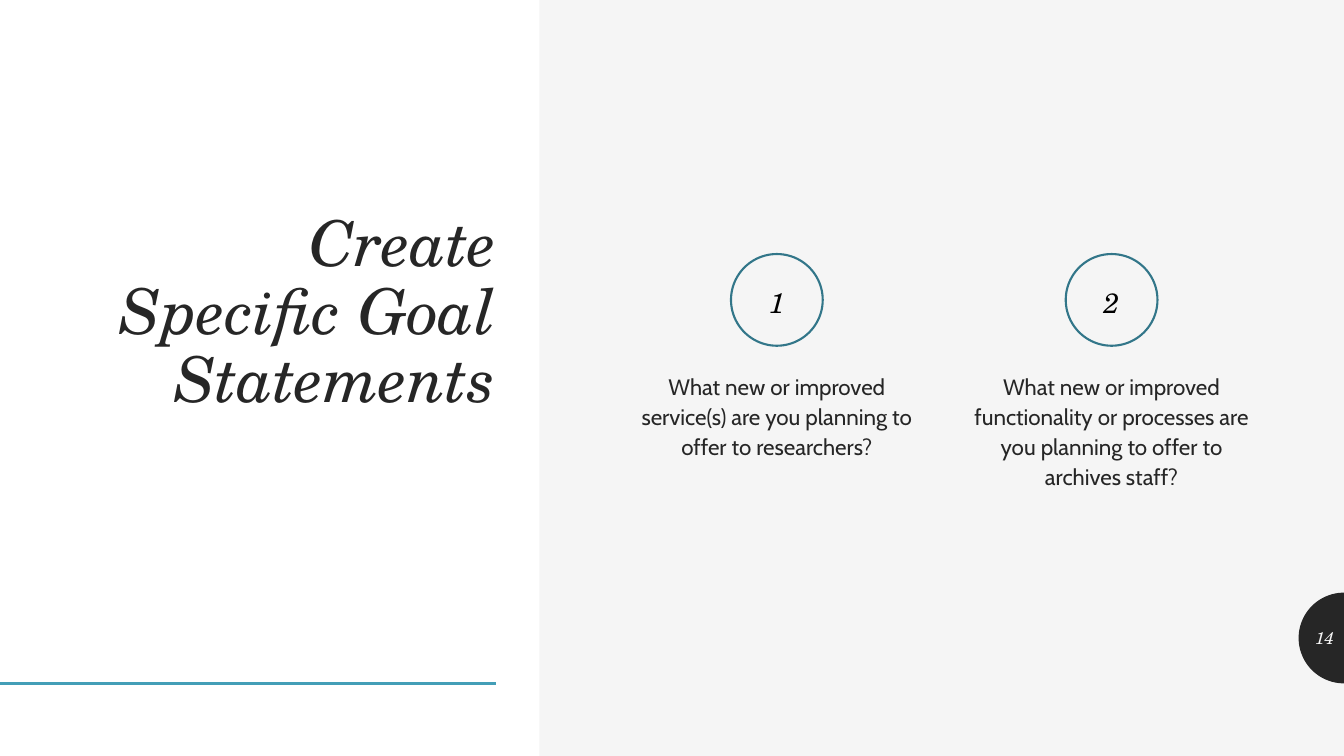
from math import cos, pi, sin

from lxml import etree
from pptx import Presentation
from pptx.dml.color import RGBColor
from pptx.enum.shapes import MSO_CONNECTOR, MSO_SHAPE
from pptx.enum.text import MSO_ANCHOR, MSO_AUTO_SIZE, PP_ALIGN
from pptx.oxml.ns import qn
from pptx.util import Inches, Pt

INK = RGBColor(0x26, 0x26, 0x26)
BLACK = RGBColor(0x00, 0x00, 0x00)
WHITE = RGBColor(0xFF, 0xFF, 0xFF)
PALE_GREY = RGBColor(0xF5, 0xF5, 0xF5)
TEAL = RGBColor(0x43, 0x9E, 0xB7)
DARK_TEAL = RGBColor(0x32, 0x76, 0x89)

STRAIGHT = MSO_CONNECTOR.STRAIGHT
RECTANGLE, OVAL = MSO_SHAPE.RECTANGLE, MSO_SHAPE.OVAL
TOP, MIDDLE, BOTTOM = MSO_ANCHOR.TOP, MSO_ANCHOR.MIDDLE, MSO_ANCHOR.BOTTOM
CENTER, RIGHT = PP_ALIGN.CENTER, PP_ALIGN.RIGHT
NO_AUTOFIT = MSO_AUTO_SIZE.NONE

SERIF, SANS = "TeX Gyre Schola", "Cabin"
TWO_CONTENT_LAYOUT = 3
SLIDE_WIDTH, SLIDE_HEIGHT = 13.33, 7.5

TITLE = "Create Specific Goal Statements"
QUESTIONS = [
    "What new or improved service(s) are you planning to offer to researchers?",
    "What new or improved functionality or processes are you planning to offer to archives staff?",
]

TITLE_FONT = {"name": SERIF, "size": Pt(45), "italic": True, "bold": False}
NUMBER_FONT = {"name": SERIF, "size": Pt(20), "italic": True}
PAGE_FONT = {"name": SERIF, "size": Pt(12), "italic": True}
QUESTION_FONT = {"name": SANS, "size": Pt(16)}

TITLE_PARAGRAPH = {"alignment": RIGHT, "line_spacing": 0.9, "space_before": Pt(0)}
GOAL_PARAGRAPH = {"alignment": CENTER, "line_spacing": 1.12, "space_before": Pt(9)}
PAGE_PARAGRAPH = {"alignment": RIGHT}


def set_attributes(target, values):
    """Set each named attribute of the target."""
    for name, value in values.items():
        setattr(target, name, value)


def place(shape, left, top, width, height):
    """Move and size a shape in inches."""
    box = {"left": left, "top": top, "width": width, "height": height}
    set_attributes(shape, {name: Inches(value) for name, value in box.items()})


def write(shape, text, font, color, paragraph_format, anchor, insets=None):
    """Write one formatted paragraph into a shape."""
    frame = shape.text_frame
    set_attributes(frame, {"text": text, "word_wrap": True,
                           "auto_size": NO_AUTOFIT, "vertical_anchor": anchor})
    for side, inset in zip(("left", "top", "right", "bottom"), insets or ()):
        setattr(frame, f"margin_{side}", Inches(inset))
    paragraph = frame.paragraphs[0]
    set_attributes(paragraph, paragraph_format)
    run_font = paragraph.runs[0].font
    set_attributes(run_font, font)
    run_font.color.rgb = color


def remove_bullet(paragraph):
    """Drop the bullet and indent inherited from the template."""
    properties = paragraph._p.get_or_add_pPr()
    properties.set("marL", "0")
    properties.set("indent", "0")
    etree.SubElement(properties, qn("a:buNone"))


def add_title_panel(slide, left, top, width, height):
    """Draw the white panel with its rule and the title on it."""
    shapes = slide.shapes
    panel = shapes.add_shape(RECTANGLE, *map(Inches, (left, top, width, height)))
    panel.shadow.inherit = False
    panel.fill.solid()
    panel.fill.fore_color.rgb = WHITE
    panel.line.fill.background()

    rule_top = Inches(top + 6.78)
    rule = shapes.add_connector(STRAIGHT, Inches(left), rule_top,
                                Inches(left + 4.92), rule_top)
    rule.line.color.rgb = TEAL
    rule.line.width = Pt(2)
    etree.SubElement(rule._element.spPr, qn("a:effectLst"))

    title = shapes.title
    panel._element.addprevious(title._element)
    rule._element.addnext(title._element)
    place(title, left + 0.83, top + 1.99, 4.19, 2.19)
    write(title, TITLE, TITLE_FONT, INK, TITLE_PARAGRAPH, BOTTOM,
          (0.1, 0.05, 0.1, 0.05))


def add_goal(slide, placeholder, number, question, left, top, width, height):
    """Place a question with its numbered circle above it."""
    place(placeholder, left, top, width, height)
    write(placeholder, question, QUESTION_FONT, INK, GOAL_PARAGRAPH, TOP,
          (0, 1.46, 0, 0))
    remove_bullet(placeholder.text_frame.paragraphs[0])

    diameter = 0.91
    circle = slide.shapes.add_shape(
        OVAL, Inches(left + (width - diameter) / 2), Inches(top + 0.31),
        Inches(diameter), Inches(diameter))
    circle.shadow.inherit = False
    circle.fill.background()
    circle.line.color.rgb = DARK_TEAL
    circle.line.width = Pt(1.5)
    write(circle, str(number), NUMBER_FONT, BLACK, GOAL_PARAGRAPH, MIDDLE,
          (0, 0, 0, 0))


def add_page_tab(slide, number, left, top, width, height):
    """Draw the half disc at the slide edge with the page number."""
    steps = 48
    angles = [pi * step / steps for step in range(steps + 1)]
    points = [(Inches(left + width * (1 - sin(angle))),
               Inches(top + height * (1 - cos(angle)) / 2)) for angle in angles]
    builder = slide.shapes.build_freeform(*points[0])
    builder.add_line_segments(points[1:], close=True)
    half_disc = builder.convert_to_shape()
    half_disc.shadow.inherit = False
    half_disc.fill.solid()
    half_disc.fill.fore_color.rgb = INK
    half_disc.line.fill.background()

    label = slide.shapes.add_textbox(
        *map(Inches, (left, top + 0.25, width, 0.4)))
    write(label, str(number), PAGE_FONT, PALE_GREY, PAGE_PARAGRAPH, MIDDLE)


def main():
    """Build and save the goal statements slide."""
    presentation = Presentation()
    presentation.slide_width = Inches(SLIDE_WIDTH)
    presentation.slide_height = Inches(SLIDE_HEIGHT)
    slide = presentation.slides.add_slide(
        presentation.slide_layouts[TWO_CONTENT_LAYOUT])
    slide.background.fill.solid()
    slide.background.fill.fore_color.rgb = PALE_GREY

    add_title_panel(slide, 0, 0, 5.35, SLIDE_HEIGHT)
    for index, question in enumerate(QUESTIONS):
        add_goal(slide, slide.placeholders[index + 1], index + 1, question,
                 6.24 + 3.32 * index, 2.21, 2.93, 3.92)
    add_page_tab(slide, 14, SLIDE_WIDTH - 0.45, 5.88, 0.45, 0.9)
    presentation.save("out.pptx")


if __name__ == "__main__":
    main()
